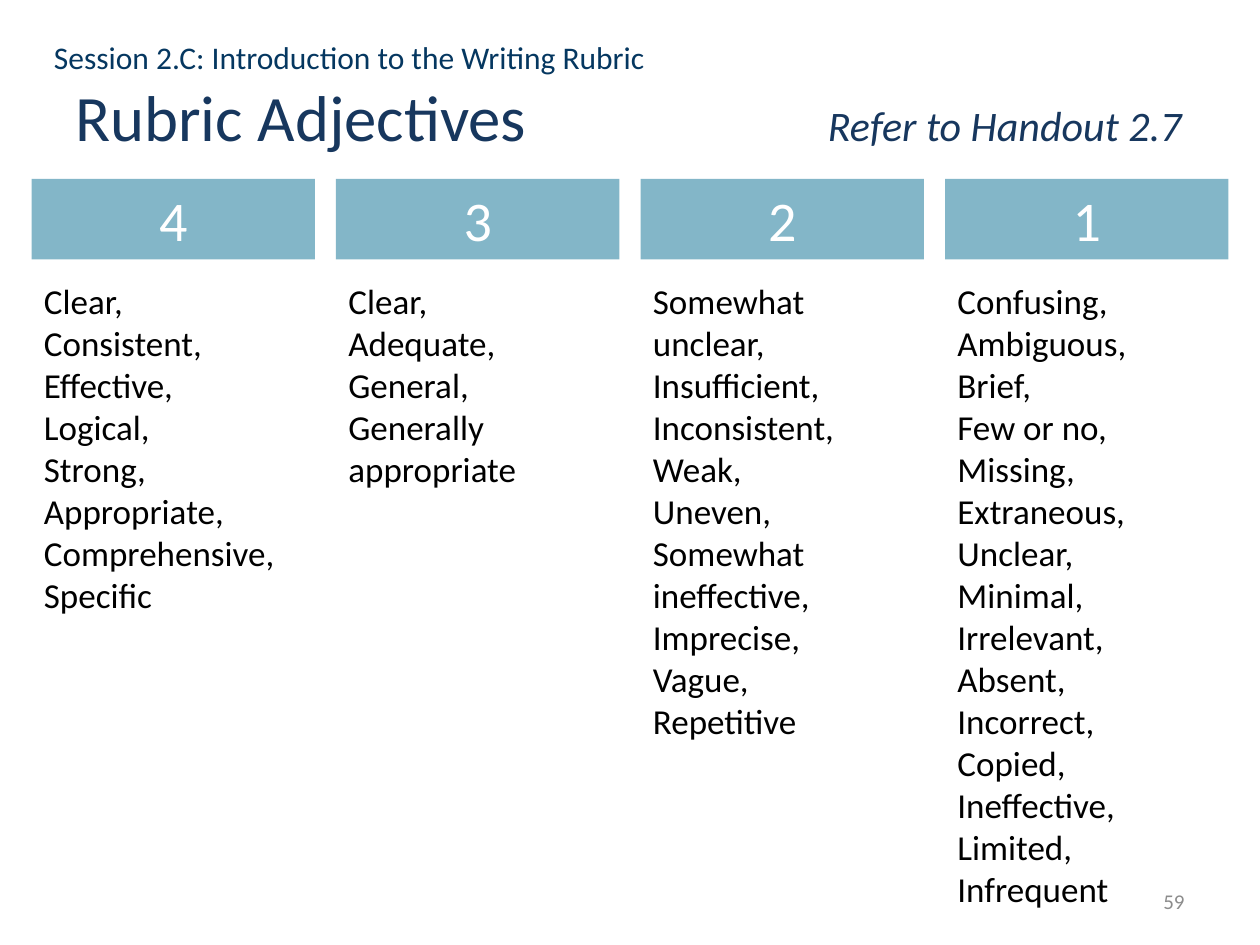
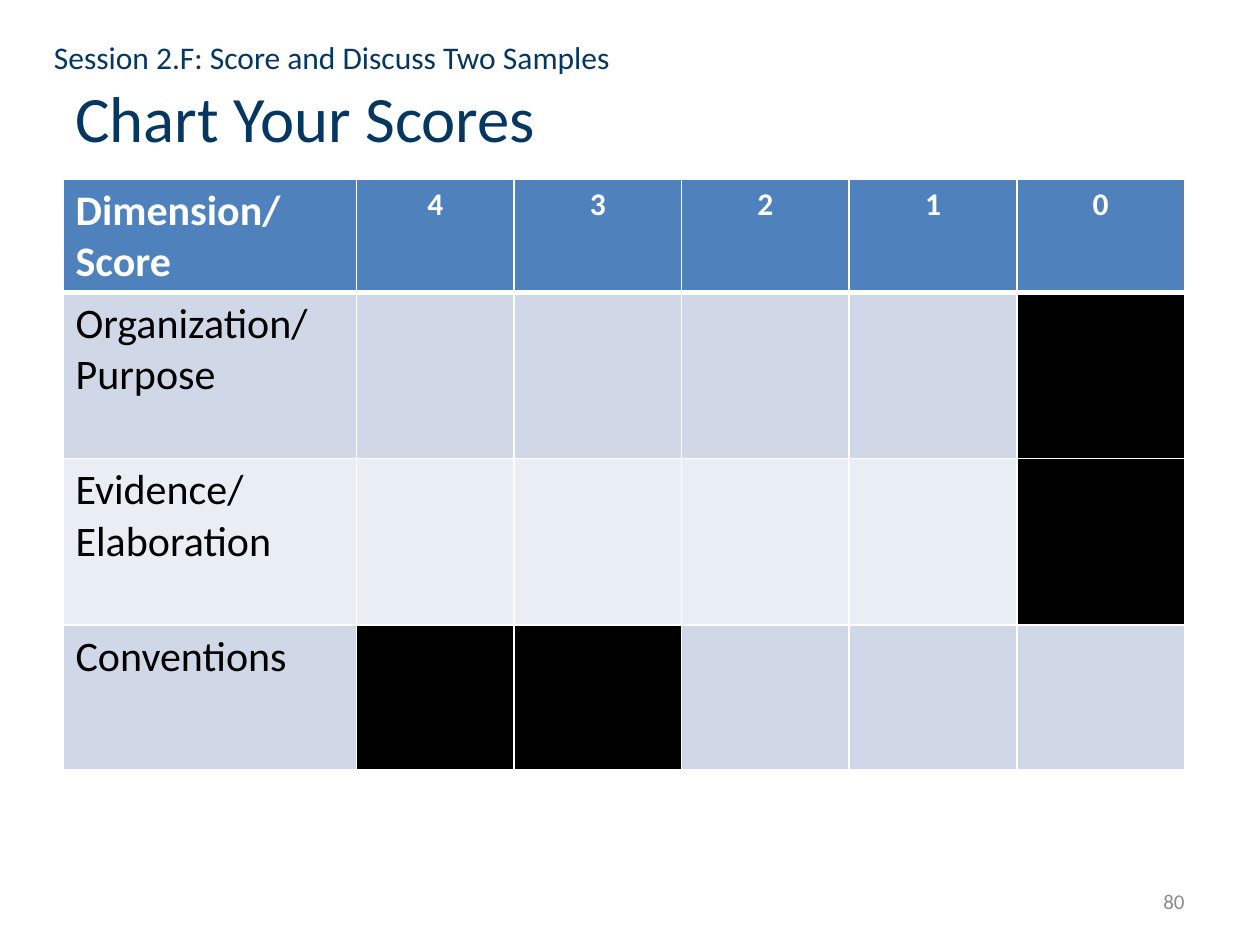
from lxml import etree
from pptx import Presentation
from pptx.dml.color import RGBColor
from pptx.enum.shapes import MSO_SHAPE
from pptx.enum.text import MSO_ANCHOR, PP_ALIGN
from pptx.oxml.ns import qn
from pptx.util import Inches, Pt

RECTANGLE = MSO_SHAPE.RECTANGLE
TOP, MIDDLE = MSO_ANCHOR.TOP, MSO_ANCHOR.MIDDLE
LEFT, CENTER, RIGHT = PP_ALIGN.LEFT, PP_ALIGN.CENTER, PP_ALIGN.RIGHT

FONT = "Calibri"
COLORS = {
    "rubric_title": "17375E",
    "chart_title": "063760",
    "session": "053760",
    "page": "8C8C8C",
    "score_band": "83B6C8",
    "header": "4F81BD",
    "odd_row": "D0D8E8",
    "even_row": "E9EDF4",
    "white": "FFFFFF",
    "black": "000000",
}

RUBRIC = {
    "session": "Session 2.C: Introduction to the Writing Rubric",
    "session_width": 4.96,
    "title": "Rubric Adjectives",
    "handout": "Refer to Handout 2.7",
    "page": "59",
}
ADJECTIVES = [
    ("4", ["Clear,", "Consistent,", "Effective,", "Logical,", "Strong,",
           "Appropriate, Comprehensive,", "Specific"]),
    ("3", ["Clear,", "Adequate,", "General,", "Generally appropriate"]),
    ("2", ["Somewhat unclear, Insufficient, Inconsistent, Weak,",
           "Uneven, Somewhat ineffective, Imprecise,", "Vague,", "Repetitive"]),
    ("1", ["Confusing, Ambiguous,", "Brief,",
           "Few or no, Missing, Extraneous, Unclear,",
           "Minimal, Irrelevant, Absent,", "Incorrect,",
           "Copied, Ineffective, Limited, Infrequent"]),
]
BODY_HEIGHTS = [2.79, 1.78, 3.8, 5.15]

CHART = {
    "session": "Session 2.F: Score and Discuss Two Samples",
    "session_width": 4.66,
    "title": "Chart Your Scores",
    "page": "80",
}
SCORE_HEADER = ["Dimension/ Score", "4", "3", "2", "1", "0"]
DIMENSIONS = [
    ("Organization/ Purpose", {"0"}),
    ("Evidence/ Elaboration", {"0"}),
    ("Conventions", {"4", "3"}),
]
COLUMN_WIDTHS = [2.33, 1.25] + [1.33] * 4
ROW_HEIGHTS = [0.9, 1.32, 1.32, 1.15]


def color(name):
    return RGBColor.from_string(COLORS[name])


def add_run(paragraph, text, size, color_name, bold=False, italic=False):
    run = paragraph.add_run()
    run.text = text
    run.font.name = FONT
    run.font.size = Pt(size)
    run.font.bold = bold
    run.font.italic = italic
    run.font.color.rgb = color(color_name)


def add_text(slide, box, lines, size, color_name, align=LEFT, anchor=TOP):
    shape = slide.shapes.add_textbox(*map(Inches, box))
    frame = shape.text_frame
    frame.word_wrap = True
    frame.vertical_anchor = anchor
    for index, line in enumerate(lines):
        paragraph = frame.add_paragraph() if index else frame.paragraphs[0]
        paragraph.alignment = align
        add_run(paragraph, line, size, color_name)
    return shape


def add_right_tab(paragraph, position):
    tabs = etree.SubElement(paragraph._p.get_or_add_pPr(), qn("a:tabLst"))
    etree.SubElement(tabs, qn("a:tab"), pos=str(Inches(position)), algn="r")


def add_frame(presentation, content, title_box, title_color):
    slide = presentation.slides.add_slide(presentation.slide_layouts[6])
    title = add_text(slide, title_box, [content["title"]], 37, title_color, anchor=MIDDLE)
    if "handout" in content:
        paragraph = title.text_frame.paragraphs[0]
        add_right_tab(paragraph, 8.78)
        add_run(paragraph, "\t", 24, title_color)
        add_run(paragraph, content["handout"], 24, title_color, italic=True)
    add_text(slide, (0.33, 0.25, content["session_width"], 0.71),
             [content["session"]], 18, "session")
    add_text(slide, (7.17, 6.95, 2.33, 0.4), [content["page"]], 12, "page", RIGHT, MIDDLE)
    return slide


def add_score_band(slide, left, width, score):
    band = slide.shapes.add_shape(RECTANGLE, Inches(left), Inches(1.42),
                                  Inches(width), Inches(0.64))
    band.shadow.inherit = False
    band.fill.solid()
    band.fill.fore_color.rgb = color("score_band")
    band.line.fill.background()
    paragraph = band.text_frame.paragraphs[0]
    paragraph.alignment = CENTER
    add_run(paragraph, score, 32, "white")


def build_rubric(presentation):
    slide = add_frame(presentation, RUBRIC, (0.5, 0.42, 9, 1), "rubric_title")
    width, first, last = 2.25, 0.25, 7.5
    step = (last - first) / (len(ADJECTIVES) - 1)
    for index, (score, lines) in enumerate(ADJECTIVES):
        left = first + index * step
        add_text(slide, (left, 2.17, width, BODY_HEIGHTS[index]), lines, 20, "black")
        add_score_band(slide, left, width, score)


def style_cell(cell, fill_name, bottom_width):
    properties = cell._tc.get_or_add_tcPr()
    widths = {"a:lnL": 1, "a:lnR": 1, "a:lnT": 1, "a:lnB": bottom_width}
    for tag, points in widths.items():
        line = etree.SubElement(properties, qn(tag), w=str(Pt(points)))
        fill = etree.SubElement(line, qn("a:solidFill"))
        etree.SubElement(fill, qn("a:srgbClr"), val=COLORS["white"])
    cell.fill.solid()
    cell.fill.fore_color.rgb = color(fill_name)


def build_chart(presentation):
    slide = add_frame(presentation, CHART, (0.5, 0.3, 9.25, 1.25), "chart_title")
    table = slide.shapes.add_table(
        len(ROW_HEIGHTS), len(COLUMN_WIDTHS), Inches(0.5), Inches(1.42),
        Inches(sum(COLUMN_WIDTHS)), Inches(sum(ROW_HEIGHTS))).table
    for column, width in zip(table.columns, COLUMN_WIDTHS):
        column.width = Inches(width)
    for row, height in zip(table.rows, ROW_HEIGHTS):
        row.height = Inches(height)

    for index, label in enumerate(SCORE_HEADER):
        cell = table.cell(0, index)
        style_cell(cell, "header", 3)
        paragraph = cell.text_frame.paragraphs[0]
        paragraph.alignment = CENTER if index else LEFT
        add_run(paragraph, label, 18 if index else 24, "white", bold=True)

    for row_index, (dimension, blocked) in enumerate(DIMENSIONS, 1):
        row_fill = "odd_row" if row_index % 2 else "even_row"
        for index, score in enumerate(SCORE_HEADER):
            fill_name = "black" if score in blocked else row_fill
            style_cell(table.cell(row_index, index), fill_name, 1)
        paragraph = table.cell(row_index, 0).text_frame.paragraphs[0]
        add_run(paragraph, dimension, 24, "black")


def main():
    presentation = Presentation()
    presentation.slide_width = Inches(10)
    presentation.slide_height = Inches(7.5)
    build_rubric(presentation)
    build_chart(presentation)
    presentation.save("out.pptx")


if __name__ == "__main__":
    main()
